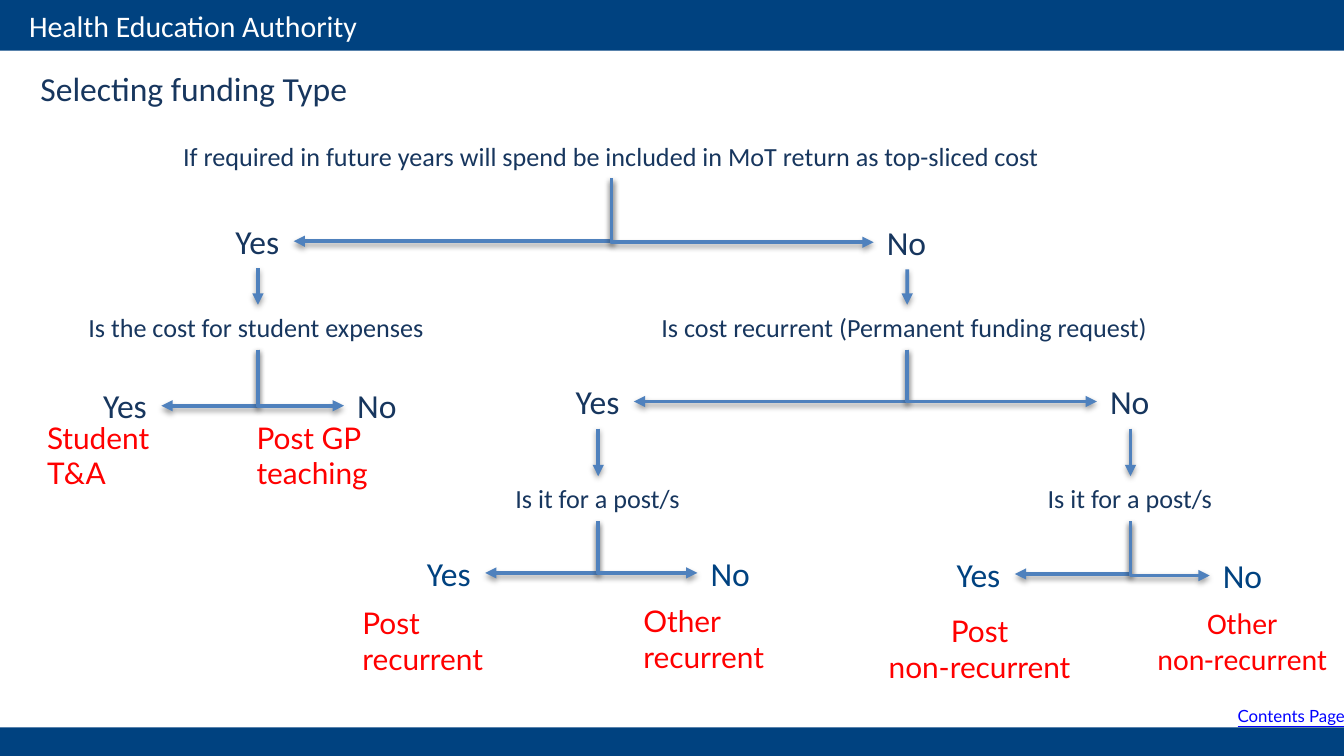
from typing import NamedTuple

from lxml import etree
from pptx import Presentation
from pptx.dml.color import RGBColor
from pptx.enum.shapes import MSO_CONNECTOR, MSO_SHAPE
from pptx.enum.text import MSO_ANCHOR, MSO_AUTO_SIZE, PP_ALIGN
from pptx.oxml.ns import qn
from pptx.util import Cm, Pt

LEFT, CENTER = PP_ALIGN.LEFT, PP_ALIGN.CENTER
STRAIGHT, ELBOW = MSO_CONNECTOR.STRAIGHT, MSO_CONNECTOR.ELBOW
TOP, LEFT_SIDE, BOTTOM, RIGHT_SIDE = range(4)
NAVY, BLUE, LINE, RED = "17365E", "004280", "4F81BD", "FF0000"
WHITE, LINK_BLUE = "FFFFFF", "0000FF"


class Label(NamedTuple):
    text: str
    x: float
    y: float
    w: float
    h: float = 1.02
    size: float = 18
    color: str = NAVY
    font: str = "Calibri"
    align: PP_ALIGN = LEFT
    wrap: bool = False


class Decision(NamedTuple):
    question: Label
    yes: Label
    no: Label


def rgb(value: str) -> RGBColor:
    return RGBColor.from_string(value)


def format_text(sp, label: Label) -> None:
    tf = sp.text_frame
    tf.text = label.text
    tf.word_wrap = label.wrap
    tf.auto_size = MSO_AUTO_SIZE.NONE
    tf.vertical_anchor = MSO_ANCHOR.TOP
    for p in tf.paragraphs:
        p.alignment = label.align
        for r in p.runs:
            r.font.name = label.font
            r.font.size = Pt(label.size)
            r.font.color.rgb = rgb(label.color)


def add_label(s, label: Label):
    sp = s.shapes.add_textbox(Cm(label.x), Cm(label.y), Cm(label.w), Cm(label.h))
    format_text(sp, label)
    return sp


def add_bar(s, y: float, height: float) -> None:
    sp = s.shapes.add_shape(MSO_SHAPE.RECTANGLE, 0, Cm(y), prs.slide_width, Cm(height))
    sp.shadow.inherit = False
    sp.fill.solid()
    sp.fill.fore_color.rgb = rgb(BLUE)
    sp.line.fill.background()


def add_arrow(s, kind, start, start_side: int, end, end_side: int):
    c = s.shapes.add_connector(kind, 0, 0, 0, 0)
    c.begin_connect(start, start_side)
    c.end_connect(end, end_side)
    c.line.color.rgb = rgb(LINE)
    c.line.width = Pt(2)
    spPr = c._element.spPr
    etree.SubElement(spPr.find(qn("a:ln")), qn("a:tailEnd"), type="triangle")
    effects = etree.SubElement(spPr, qn("a:effectLst"))
    shadow = etree.SubElement(effects, qn("a:outerShdw"), blurRad=str(Pt(3.1)),
                              dist=str(Pt(1.6)), dir="5400000", rotWithShape="0")
    black = etree.SubElement(shadow, qn("a:srgbClr"), val="000000")
    etree.SubElement(black, qn("a:alpha"), val="38000")
    return c


def add_branch(s, question, answer, answer_side: int) -> None:
    """One-bend arrow: down from the question, then sideways to the answer."""
    c = add_arrow(s, ELBOW, question, BOTTOM, answer, answer_side)
    mid_x, mid_y = (c.begin_x + c.end_x) // 2, (c.begin_y + c.end_y) // 2
    across, down = abs(c.end_x - c.begin_x), c.end_y - c.begin_y
    c.left, c.top = mid_x - down // 2, mid_y - across // 2
    c.width, c.height = down, across
    spPr = c._element.spPr
    spPr.find(qn("a:prstGeom")).set("prst", "bentConnector2")
    xfrm = spPr.find(qn("a:xfrm"))
    to_right = answer_side == LEFT_SIDE
    xfrm.set("rot", "16200000" if to_right else "5400000")
    xfrm.set("flipH", "1" if to_right else "0")


def add_decision(s, decision: Decision, parent=None):
    question, yes, no = (add_label(s, label) for label in decision)
    if parent is not None:
        add_arrow(s, STRAIGHT, parent, BOTTOM, question, TOP)
    add_branch(s, question, yes, RIGHT_SIDE)
    add_branch(s, question, no, LEFT_SIDE)
    return yes, no


def ask(text: str, x: float, y: float, w: float) -> Label:
    return Label(text, x, y, w, 0.85, 14)


def yes_at(x: float, y: float, color: str = NAVY) -> Label:
    return Label("Yes", x, y, 1.35, color=color)


def no_at(x: float, y: float, color: str = NAVY) -> Label:
    return Label("No", x, y, 1.27, color=color)


def result(text: str, x: float, y: float, w: float, h: float = 0.94,
           align: PP_ALIGN = LEFT, font: str = "Lato") -> Label:
    return Label(text, x, y, w, h, 16, RED, font, align, True)


ROOT = Decision(
    ask("If required in future years will spend be included in MoT return as top-sliced cost",
        0.76, 2.52, 21.59)._replace(align=CENTER, wrap=True),
    yes_at(4.2, 4.05), no_at(16.51, 4.07))
STUDENT = Decision(ask("Is the cost for student expenses", 1.42, 5.76, 6.91),
                   yes_at(1.7, 7.16), no_at(6.5, 7.16))
RECURRENT = Decision(ask("Is cost recurrent (Permanent funding request)", 12.25, 5.76, 9.79),
                     yes_at(10.63, 7.08), no_at(20.73, 7.08))
POST = "Is it for a post/s"
RECURRENT_POST = Decision(ask(POST, 9.49, 9, 3.63),
                          yes_at(7.82, 10.32, BLUE), no_at(13.18, 10.32, BLUE))
ONE_OFF_POST = Decision(ask(POST, 19.55, 9, 3.63),
                        yes_at(17.83, 10.34, BLUE), no_at(22.86, 10.37, BLUE))
RESULTS = [
    result("Student T&A", 0.64, 7.8, 3.5),
    result("Post GP teaching", 4.6, 7.8, 4.55),
    result("Post recurrent", 6.6, 11.3, 3.91),
    result("Other recurrent", 11.91, 11.27, 4.22),
    result("Post\nnon-recurrent", 16.38, 11.46, 4.27, 1.63, CENTER),
    result("Other\nnon-recurrent", 21.51, 11.3, 3.94, 1.63, CENTER, "Calibri"),
]

prs = Presentation()
prs.slide_width, prs.slide_height = Cm(25.4), Cm(14.29)
s = prs.slides.add_slide(prs.slide_layouts[5])

# Header and footer bars
add_bar(s, 13.75, 0.54)
add_bar(s, 0, 0.96)
add_label(s, Label("Health Education Authority", 0.3, 0.03, 10.8, 0.94, 16, WHITE))

# Title
TITLE = Label("Selecting funding Type", 0.51, 1.15, 6.4)
title = s.shapes.title
title.left, title.top, title.width, title.height = (Cm(v) for v in TITLE[1:5])
format_text(title, TITLE)

# Decision tree
top_sliced, not_top_sliced = add_decision(s, ROOT)
add_decision(s, STUDENT, top_sliced)
recurrent, one_off = add_decision(s, RECURRENT, not_top_sliced)
add_decision(s, RECURRENT_POST, recurrent)
add_decision(s, ONE_OFF_POST, one_off)

# Funding types
for label in RESULTS:
    add_label(s, label)

# Contents page label
contents = add_label(s, Label("Contents Page", 23.14, 13.21, 2.69, 0.64, 9,
                              LINK_BLUE, "Lato", wrap=True))
contents.text_frame.paragraphs[0].runs[0].font.underline = True

prs.save("out.pptx")
